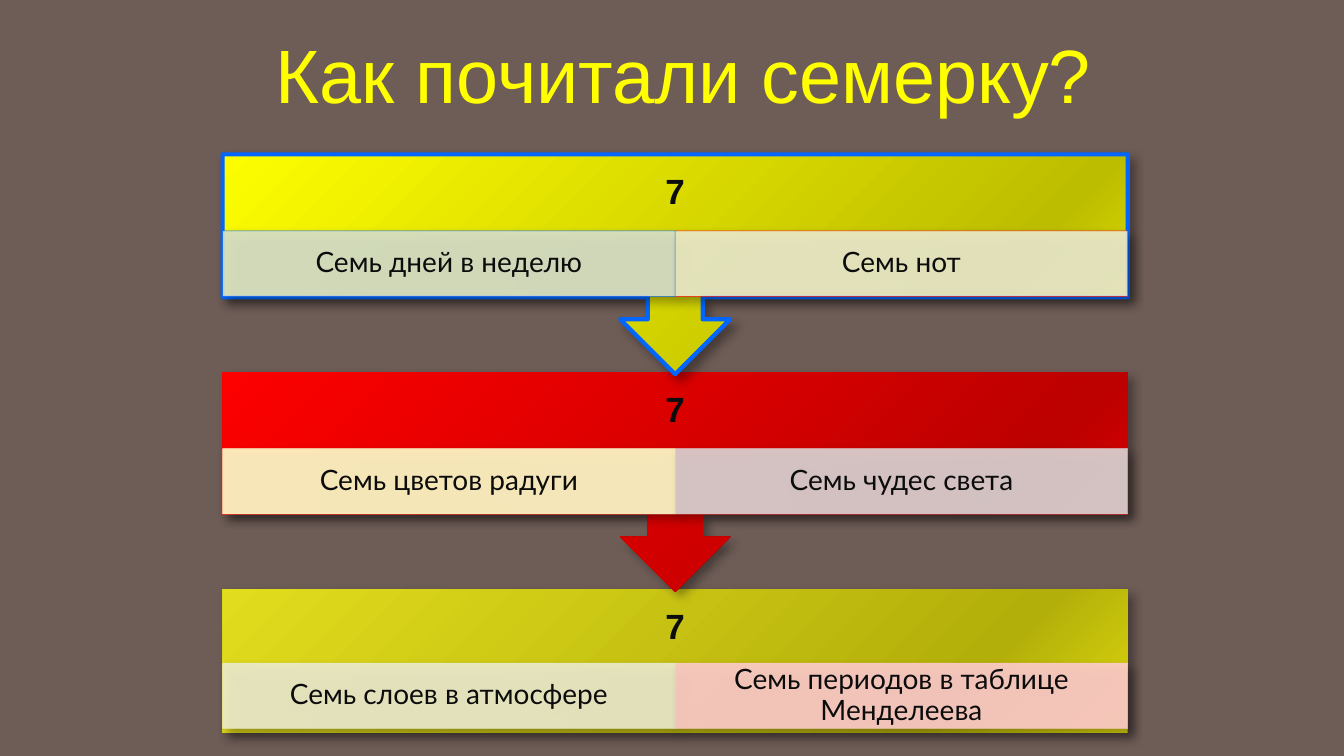
from dataclasses import dataclass
from typing import Optional

from lxml.etree import SubElement
from pptx import Presentation
from pptx.dml.color import RGBColor
from pptx.enum.shapes import MSO_SHAPE
from pptx.enum.text import MSO_ANCHOR, PP_ALIGN
from pptx.oxml import parse_xml
from pptx.oxml.ns import nsdecls, qn
from pptx.util import Cm, Pt

COLORS = {
    "background": "6E5C56",
    "title": "FFFF00",
    "text": "0C0C0C",
    "shadow": "000000",
    "blue": "0066FF",
    "red": "FF0000",
    "sage": "D6DFCC",
    "cream": "ECEBCE",
    "light yellow": "FFFFCC",
    "gray": "DCD7D6",
    "pink": "FFCCCC",
}
GRADIENTS = {
    "yellow": ("FDFD00", "BDBD00", "E7E700"),
    "red": ("FD0000", "BD0000", "E70000"),
    "olive": ("E1DC1D", "B3AF0A", "DCD60D"),
}
GRADIENT_STOPS = (0, 80, 100)

LEFT, WIDTH = 5.61, 22.81
FIRST_TOP, STEP = 3.89, 5.485
CALLOUT_HEIGHT, LAST_HEIGHT = 5.54, 3.61
HEADER_HEIGHT, CELL_HEIGHT = 1.96, 1.65


@dataclass
class Fact:
    text: str
    fill: str
    line: str


@dataclass
class Stage:
    gradient: str
    facts: tuple[Fact, Fact]
    cell_offset: float = 1.93
    line: Optional[str] = None
    has_arrow: bool = True


STAGES = (
    Stage("yellow", (Fact("Семь дней в неделю", "sage", "blue"),
                     Fact("Семь нот", "cream", "red")), line="blue"),
    Stage("red", (Fact("Семь цветов радуги", "light yellow", "light yellow"),
                  Fact("Семь чудес света", "gray", "gray"))),
    Stage("olive", (Fact("Семь слоев в атмосфере", "cream", "cream"),
                    Fact("Семь периодов в таблице Менделеева", "pink", "pink")),
          cell_offset=1.85, has_arrow=False),
)


def rgb(name: str) -> RGBColor:
    return RGBColor.from_string(COLORS[name])


def write_text(shape, text: str, *, size: float, font: str, color: str = "text",
               bold: bool = False, spacing: float = 0.9,
               margins: tuple[float, float] = (0.25, 0.13)) -> None:
    """Write centred text; margins are horizontal and vertical, in centimetres."""
    frame = shape.text_frame
    frame.word_wrap = True
    frame.vertical_anchor = MSO_ANCHOR.MIDDLE
    frame.margin_left = frame.margin_right = Cm(margins[0])
    frame.margin_top = frame.margin_bottom = Cm(margins[1])
    paragraph = frame.paragraphs[0]
    paragraph.alignment = PP_ALIGN.CENTER
    paragraph.line_spacing = spacing
    run = paragraph.add_run()
    run.text = text
    run.font.size = Pt(size)
    run.font.name = font
    run.font.bold = bold
    run.font.color.rgb = rgb(color)


def set_shadow(shape) -> None:
    shape.shadow.inherit = False
    effects = shape._element.spPr.find(qn("a:effectLst"))
    shadow = SubElement(effects, qn("a:outerShdw"), blurRad=str(Pt(7)), dist=str(Pt(5)),
                        dir="2700000", algn="br", rotWithShape="0")
    color = SubElement(shadow, qn("a:srgbClr"), val=COLORS["shadow"])
    SubElement(color, qn("a:alpha"), val="35000")


def set_line(shape, color: Optional[str], width: float) -> None:
    if color is None:
        shape.line.fill.background()
    else:
        shape.line.color.rgb = rgb(color)
        shape.line.width = Pt(width)


def set_radial_gradient(shape, colors: tuple[str, str, str]) -> None:
    """Fill with a gradient that spreads from the top left corner."""
    stops = "".join(f'<a:gs pos="{position * 1000}"><a:srgbClr val="{color}"/></a:gs>'
                    for position, color in zip(GRADIENT_STOPS, colors))
    gradient = parse_xml(
        f'<a:gradFill {nsdecls("a")} rotWithShape="1"><a:gsLst>{stops}</a:gsLst>'
        '<a:path path="circle"><a:fillToRect r="100000" b="100000"/></a:path></a:gradFill>')
    shape.fill.background()
    properties = shape._element.spPr
    properties.replace(properties.find(qn("a:noFill")), gradient)


def add_cell(shapes, fact: Fact, left: float, top: float) -> None:
    cell = shapes.add_shape(MSO_SHAPE.RECTANGLE, Cm(left), Cm(top),
                            Cm(WIDTH / 2), Cm(CELL_HEIGHT))
    cell.fill.solid()
    cell.fill.fore_color.rgb = rgb(fact.fill)
    set_line(cell, fact.line, 0.25)
    for color in cell._element.spPr.iter(qn("a:srgbClr")):
        SubElement(color, qn("a:alpha"), val="90000")
    set_shadow(cell)
    write_text(cell, fact.text, size=20, font="Lato", margins=(0.4, 0.08))


def add_stage(shapes, stage: Stage, top: float) -> None:
    kind = MSO_SHAPE.UP_ARROW_CALLOUT if stage.has_arrow else MSO_SHAPE.RECTANGLE
    height = CALLOUT_HEIGHT if stage.has_arrow else LAST_HEIGHT
    block = shapes.add_shape(kind, Cm(LEFT), Cm(top), Cm(WIDTH), Cm(height))
    block.rotation = 180 if stage.has_arrow else 0
    set_radial_gradient(block, GRADIENTS[stage.gradient])
    set_line(block, stage.line, 3)
    set_shadow(block)

    header = shapes.add_textbox(Cm(LEFT), Cm(top), Cm(WIDTH), Cm(HEADER_HEIGHT))
    write_text(header, "7", size=25, font="Arial", bold=True, margins=(0.48, 0.48))
    for column, fact in enumerate(stage.facts):
        add_cell(shapes, fact, LEFT + column * WIDTH / 2, top + stage.cell_offset)


def main() -> None:
    presentation = Presentation()
    presentation.slide_width, presentation.slide_height = Cm(33.87), Cm(19.05)
    slide = presentation.slides.add_slide(presentation.slide_layouts[5])
    slide.background.fill.solid()
    slide.background.fill.fore_color.rgb = rgb("background")

    title = slide.shapes.title
    title.left, title.top, title.width, title.height = Cm(6.22), Cm(0.58), Cm(22.02), Cm(2.54)
    write_text(title, "Как почитали семерку?", size=54, font="Arial", color="title", spacing=1.0)

    diagram = slide.shapes.add_group_shape()
    for index, stage in reversed(list(enumerate(STAGES))):
        add_stage(diagram.shapes, stage, FIRST_TOP + index * STEP)
    presentation.save("out.pptx")


if __name__ == "__main__":
    main()
